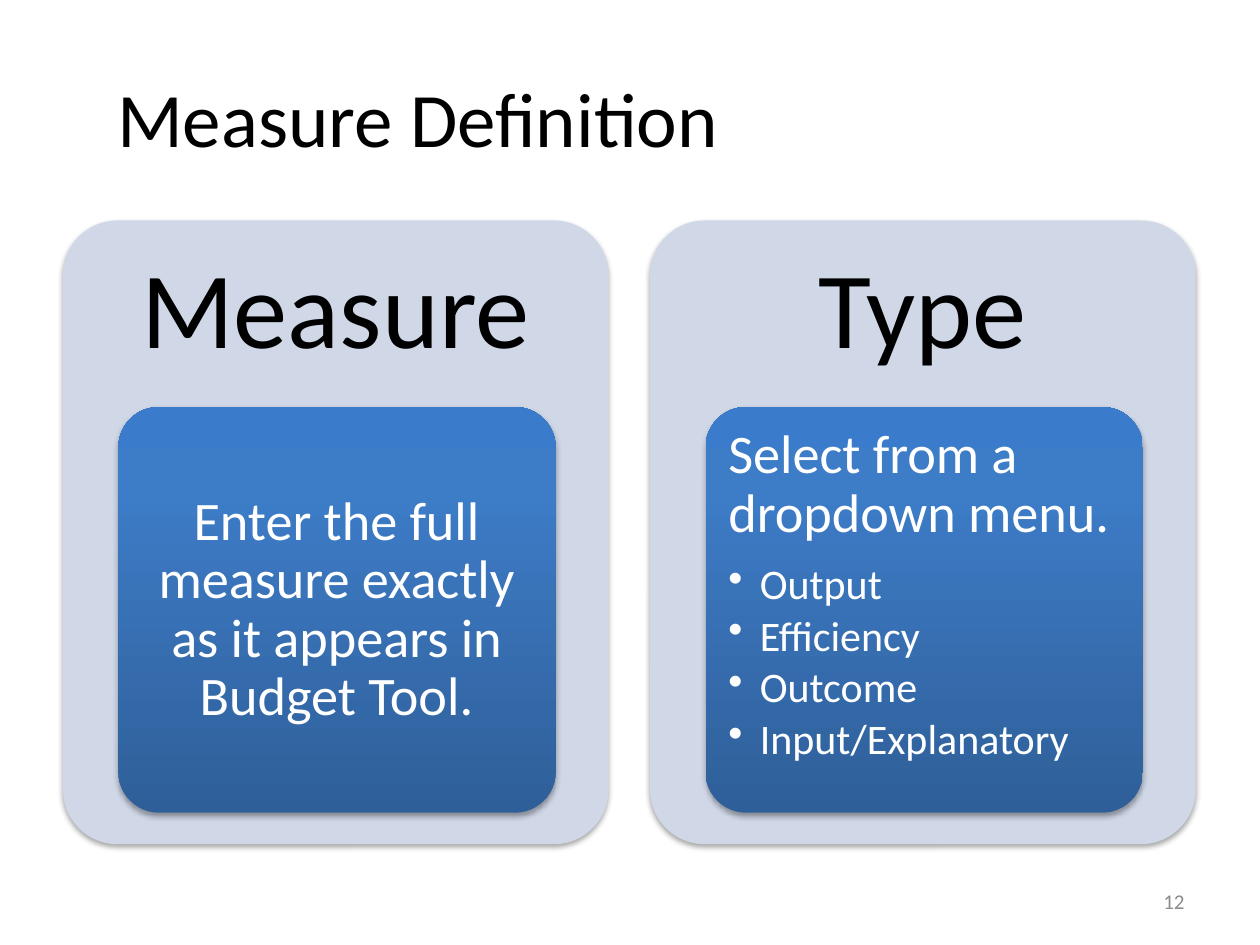
from copy import deepcopy

from lxml import etree
from pptx import Presentation
from pptx.dml.color import RGBColor
from pptx.enum.shapes import MSO_SHAPE
from pptx.enum.text import MSO_ANCHOR, PP_ALIGN
from pptx.oxml.ns import qn
from pptx.util import Inches, Pt

ROUND = MSO_SHAPE.ROUNDED_RECTANGLE
TOP, MIDDLE = MSO_ANCHOR.TOP, MSO_ANCHOR.MIDDLE
LEFT, CENTER, RIGHT = PP_ALIGN.LEFT, PP_ALIGN.CENTER, PP_ALIGN.RIGHT

BLACK = RGBColor(0x00, 0x00, 0x00)
WHITE = RGBColor(0xFF, 0xFF, 0xFF)
GRAY = RGBColor(0x8C, 0x8C, 0x8C)
PALE = RGBColor(0xD0, 0xD8, 0xE8)
BLUES = [
    (0, RGBColor(0x2F, 0x5F, 0x99)),
    (0.8, RGBColor(0x3D, 0x7C, 0xC7)),
    (1, RGBColor(0x3A, 0x7C, 0xCB)),
]
FONT = "Calibri"
TYPES = ["Output", "Efficiency", "Outcome", "Input/Explanatory"]


def add_bullet(para):
    props = para._p.get_or_add_pPr()
    props.set("marL", str(Inches(0.25)))
    props.set("indent", str(-Inches(0.25)))
    etree.SubElement(props, qn("a:buChar"), char="•")


def write(frame, text, size, color, align=LEFT, line=None, after=None,
          bullet=False, more=False):
    """Fill the first paragraph, or add one if more; after is a share of size."""
    para = frame.add_paragraph() if more else frame.paragraphs[0]
    para.alignment = align
    if line:
        para.line_spacing = line
    if after:
        para.space_after = Pt(round(size * after, 1))
    if bullet:
        para.level = 1
        add_bullet(para)
    run = para.add_run()
    run.text = text
    run.font.name = FONT
    run.font.size = Pt(size)
    run.font.color.rgb = color


def add_box(slide, x, y, w, h, pad=(0.1, 0.05), anchor=MIDDLE):
    box = slide.shapes.add_textbox(Inches(x), Inches(y), Inches(w), Inches(h))
    frame = box.text_frame
    frame.word_wrap = True
    frame.vertical_anchor = anchor
    frame.margin_left = frame.margin_right = Inches(pad[0])
    frame.margin_top = frame.margin_bottom = Inches(pad[1])
    return frame


def add_shadow(shape):
    shape.shadow.inherit = False
    effects = shape._element.spPr.find(qn("a:effectLst"))
    outer = etree.SubElement(
        effects, qn("a:outerShdw"), blurRad=str(Pt(3.1)), dist=str(Pt(1.8)),
        dir="5400000", rotWithShape="0")
    color = etree.SubElement(outer, qn("a:srgbClr"), val="000000")
    etree.SubElement(color, qn("a:alpha"), val="35000")


def shade(fill, stops, angle):
    fill.gradient()
    fill.gradient_angle = angle
    first = fill._xPr.find(".//" + qn("a:gs"))
    for _ in stops[2:]:
        first.addnext(deepcopy(first))
    for stop, (place, color) in zip(fill.gradient_stops, stops):
        stop.position = place
        stop.color.rgb = color


def add_card(slide, x, y, w, h):
    card = slide.shapes.add_shape(
        ROUND, Inches(x), Inches(y), Inches(w), Inches(h))
    card.adjustments[0] = 0.1
    card.line.fill.background()
    add_shadow(card)
    return card


def add_panel(slide, x, head, anchor):
    """Draw a pale card with its heading and inner card; return the inner text."""
    outer = add_card(slide, x, 1.75, 4.33, 4.95)
    outer.fill.solid()
    outer.fill.fore_color.rgb = PALE
    frame = add_box(slide, x, 1.75, 4.33, 1.48, pad=(0.26, 0.26))
    write(frame, head, 62, BLACK, align=CENTER, line=0.9, after=0.35)
    inner = add_card(slide, x + 0.44, 3.23, 3.47, 3.22)
    shade(inner.fill, BLUES, 90)
    return add_box(slide, x + 0.53, 3.33, 3.28, 3.03,
                   pad=(0.09, 0.06), anchor=anchor)


def add_title(slide, text):
    title = slide.shapes.title
    title.left, title.top = Inches(0.83), Inches(0.3)
    title.width, title.height = Inches(8.67), Inches(1.25)
    title.text_frame.vertical_anchor = MIDDLE
    write(title.text_frame, text, 44, BLACK)


def main():
    deck = Presentation()
    deck.slide_width, deck.slide_height = Inches(10), Inches(7.5)
    slide = deck.slides.add_slide(deck.slide_layouts[5])
    add_title(slide, "Measure Definition")

    measure = add_panel(slide, 0.5, "Measure", MIDDLE)
    write(measure, "Enter the full measure exactly as it appears in Budget Tool.",
          31, WHITE, align=CENTER, line=0.9, after=0.35)

    kind = add_panel(slide, 5.16, "Type", TOP)
    write(kind, "Select from a dropdown menu.", 31, WHITE, line=0.9, after=0.35)
    for name in TYPES:
        write(kind, name, 24, WHITE, line=0.9, after=0.15, bullet=True, more=True)

    number = add_box(slide, 7.17, 6.95, 2.33, 0.4)
    write(number, "12", 12, GRAY, align=RIGHT)
    deck.save("out.pptx")


if __name__ == "__main__":
    main()
